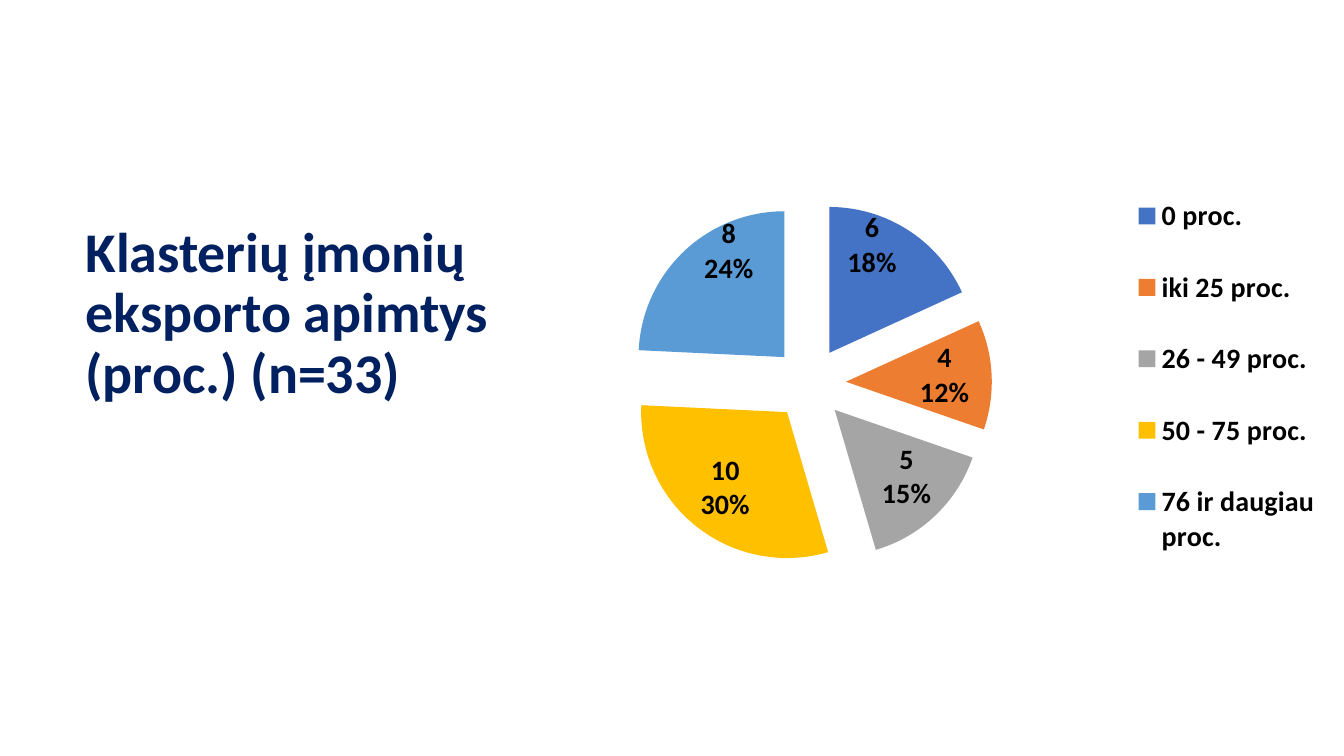
from dataclasses import dataclass

from lxml import etree
from pptx import Presentation
from pptx.chart.data import CategoryChartData
from pptx.dml.color import RGBColor
from pptx.enum.chart import XL_CHART_TYPE, XL_LABEL_POSITION, XL_LEGEND_POSITION
from pptx.enum.text import MSO_ANCHOR
from pptx.oxml.ns import qn
from pptx.text.text import Font
from pptx.util import Pt

PIE = XL_CHART_TYPE.PIE
INSIDE_END = XL_LABEL_POSITION.INSIDE_END
LEGEND_RIGHT = XL_LEGEND_POSITION.RIGHT
BOTTOM = MSO_ANCHOR.BOTTOM
FONT_NAME = "Calibri"


@dataclass
class Slice:
    """One answer; label_shift is a share of the chart's width and height."""
    label: str
    companies: int
    fill: str
    label_shift: tuple[float, float] | None = None


SLICES = [
    Slice("0 proc.", 6, "4472C4", (-0.01, -0.05)),
    Slice("iki 25 proc.", 4, "ED7D31", (-0.02, 0)),
    Slice("26 - 49 proc.", 5, "A5A5A5"),
    Slice("50 - 75 proc.", 10, "FFC000"),
    Slice("76 ir daugiau proc.", 8, "5B9BD5", (0.02, -0.08)),
]


def color(value: str) -> RGBColor:
    return RGBColor.from_string(value)


def style_font(font: Font, size: float, value: str) -> None:
    font.name = FONT_NAME
    font.size = Pt(size)
    font.bold = True
    font.color.rgb = color(value)


def add_title(page) -> None:
    box = page.shapes.add_textbox(Pt(54), Pt(108), Pt(322), Pt(185))
    frame = box.text_frame
    frame.word_wrap = True
    frame.vertical_anchor = BOTTOM
    frame.text = "Klasterių įmonių eksporto apimtys (proc.) (n=33)"
    para = frame.paragraphs[0]
    para.line_spacing = 0.9
    style_font(para.runs[0].font, 40, "002060")


def explode(series, percent: int) -> None:
    """Move the slices of a pie apart; the points must exist already."""
    explosion = etree.Element(qn("c:explosion"), val=str(percent))
    series._element.find(qn("c:dPt")).addprevious(explosion)


def make_layout(**settings: float | str):
    layout = etree.Element(qn("c:layout"))
    manual = etree.SubElement(layout, qn("c:manualLayout"))
    for name, value in settings.items():
        etree.SubElement(manual, qn(f"c:{name}"), val=str(value))
    return layout


def place(element, x: float, y: float, w: float, h: float):
    """Fix a chart part at shares of the chart's width and height."""
    for old in element.findall(qn("c:layout")):
        element.remove(old)
    inner = {"layoutTarget": "inner"} if element.tag == qn("c:plotArea") else {}
    return make_layout(**inner, xMode="edge", yMode="edge", x=x, y=y, w=w, h=h)


def break_label(element) -> None:
    """Put value and percentage on lines of their own."""
    separator = etree.Element(qn("c:separator"))
    separator.text = "\n"
    element.find(qn("c:showBubbleSize")).addnext(separator)


def add_labels(series) -> None:
    labels = series.data_labels
    labels.show_value = True
    labels.show_percentage = True
    labels.position = INSIDE_END
    style_font(labels.font, 20, "000000")
    break_label(labels._element)
    for index, item in enumerate(SLICES):
        if item.label_shift is None:
            continue
        label = series.points[index].data_label
        label.position = INSIDE_END
        style_font(label.font, 20, "000000")
    shifts = [item.label_shift for item in SLICES if item.label_shift]
    for element, (x, y) in zip(labels._element.findall(qn("c:dLbl")), shifts):
        element.find(qn("c:idx")).addnext(make_layout(x=x, y=y))
        element.find(qn("c:showPercent")).set("val", "1")
        break_label(element)


def add_export_chart(page) -> None:
    data = CategoryChartData()
    data.categories = [item.label for item in SLICES]
    data.add_series("Series 1", [item.companies for item in SLICES])
    chart = page.shapes.add_chart(PIE, Pt(371), Pt(94.5), Pt(584), Pt(352), data).chart
    chart.has_title = False
    style_font(chart.font, 20, "000000")

    chart.has_legend = True
    legend = chart.legend
    legend.position = LEGEND_RIGHT
    legend.include_in_layout = False
    legend_layout = place(legend._element, 0.74, 0.06, 0.25, 0.87)
    legend._element.find(qn("c:legendPos")).addnext(legend_layout)

    plot = chart.plots[0]
    plot.vary_by_categories = True
    plot_area = plot._element.getparent()
    plot_area.insert(0, place(plot_area, 0.13, 0.14, 0.45, 0.74))

    series = plot.series[0]
    for index, item in enumerate(SLICES):
        fill = series.points[index].format.fill
        fill.solid()
        fill.fore_color.rgb = color(item.fill)
    explode(series, 25)
    add_labels(series)


def main() -> None:
    deck = Presentation()
    deck.slide_width = Pt(960)
    deck.slide_height = Pt(540)
    page = deck.slides.add_slide(deck.slide_layouts[6])
    add_title(page)
    add_export_chart(page)
    deck.save("out.pptx")


if __name__ == "__main__":
    main()
